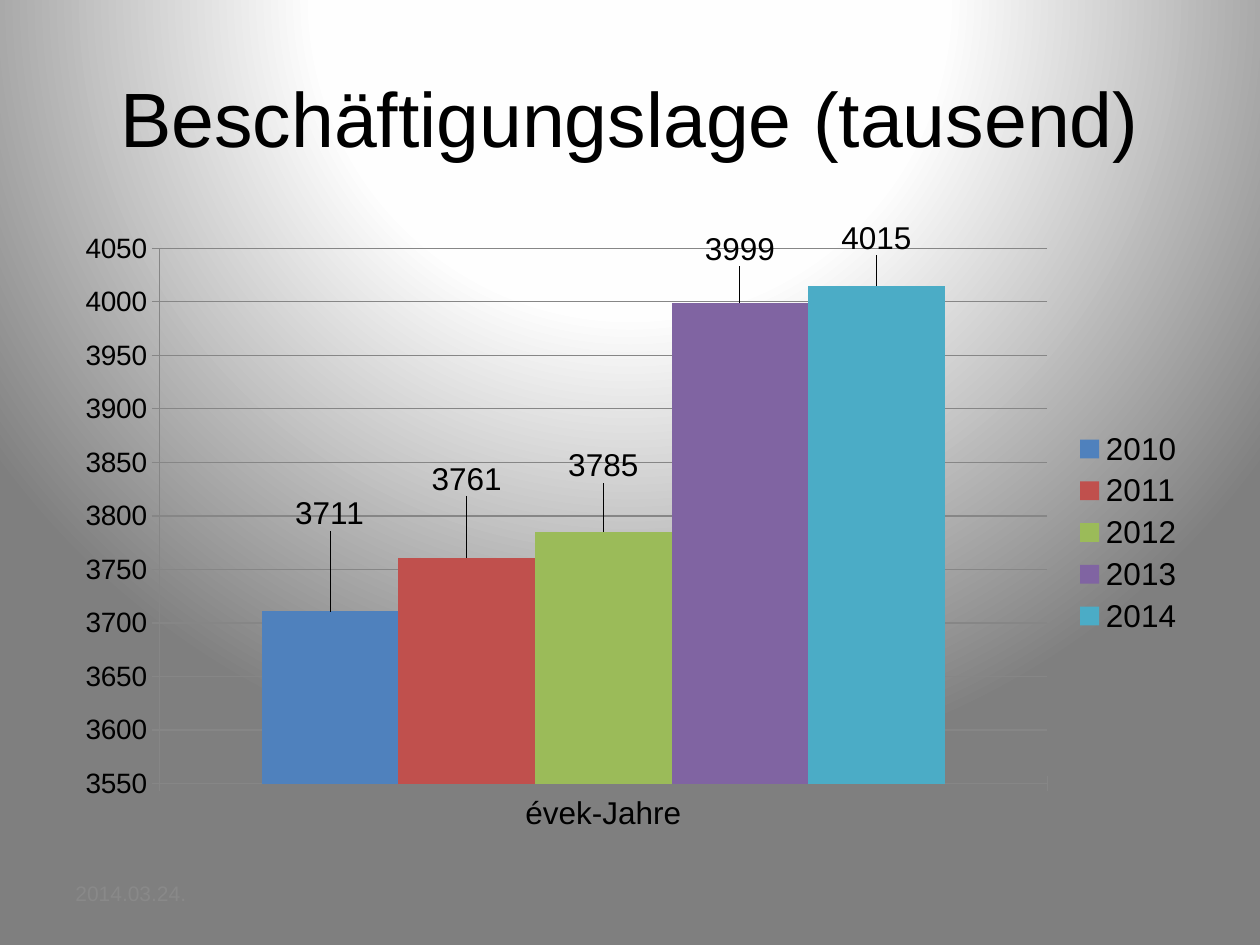
from dataclasses import dataclass
from lxml import etree
from pptx import Presentation
from pptx.chart.data import CategoryChartData
from pptx.dml.color import RGBColor
from pptx.enum.chart import XL_CHART_TYPE, XL_LABEL_POSITION, XL_LEGEND_POSITION, XL_TICK_MARK
from pptx.enum.text import MSO_ANCHOR, PP_ALIGN
from pptx.oxml import parse_xml
from pptx.oxml.ns import nsdecls, qn
from pptx.util import Pt

COLUMN = XL_CHART_TYPE.COLUMN_CLUSTERED
OUTER = XL_LABEL_POSITION.OUTSIDE_END
RIGHT = XL_LEGEND_POSITION.RIGHT
CROSS = XL_TICK_MARK.CROSS
MIDDLE = MSO_ANCHOR.MIDDLE
CENTER, LEFT = PP_ALIGN.CENTER, PP_ALIGN.LEFT

BLACK = RGBColor(0, 0, 0)
GRAY = RGBColor(0x89, 0x89, 0x89)
RULE = RGBColor(0x86, 0x86, 0x86)
BLUE = RGBColor(0x4F, 0x81, 0xBD)
RED = RGBColor(0xC0, 0x50, 0x4D)
GREEN = RGBColor(0x9B, 0xBB, 0x59)
PURPLE = RGBColor(0x80, 0x64, 0xA2)
AQUA = RGBColor(0x4B, 0xAC, 0xC6)
FACE = "Arial"
STOPS = ((0, "FFFFFF"), (40, "FEFEFE"), (100, "7F7F7F"))


@dataclass
class Bar:
    year: str
    jobs: int
    color: RGBColor
    lift: float


BARS = [
    Bar("2010", 3711, BLUE, -0.12),
    Bar("2011", 3761, RED, -0.09),
    Bar("2012", 3785, GREEN, -0.07),
    Bar("2013", 3999, PURPLE, -0.05),
    Bar("2014", 4015, AQUA, -0.04),
]


def assign(item, values: dict) -> None:
    for name, value in values.items():
        setattr(item, name, value)


def style(font, size: int, color: RGBColor = BLACK) -> None:
    assign(font, {"name": FACE, "size": Pt(size)})
    font.color.rgb = color


def write(shape, text: str, size: int, color: RGBColor, align) -> None:
    frame = shape.text_frame
    frame.text = text
    assign(frame, {"word_wrap": True, "vertical_anchor": MIDDLE})
    line = frame.paragraphs[0]
    line.alignment = align
    style(line.runs[0].font, size, color)


def shade(slide) -> None:
    fill = slide.background.fill
    fill.solid()
    stops = "".join(
        f'<a:gs pos="{pos * 1000}"><a:srgbClr val="{color}"/></a:gs>'
        for pos, color in STOPS
    )
    grad = parse_xml(
        f'<a:gradFill {nsdecls("a")} rotWithShape="1"><a:gsLst>{stops}</a:gsLst>'
        '<a:path path="circle"><a:fillToRect l="50000" t="-80000" r="50000" '
        'b="180000"/></a:path></a:gradFill>'
    )
    solid = slide.element.find(".//" + qn("a:solidFill"))
    solid.getparent().replace(solid, grad)


def layout(values: dict):
    root = etree.Element(qn("c:layout"))
    manual = etree.SubElement(root, qn("c:manualLayout"))
    for name, value in values.items():
        etree.SubElement(manual, qn("c:" + name)).set("val", str(value))
    return root


def mark(series, bar: Bar) -> None:
    series.smooth = False if hasattr(series, "smooth") else None
    series.format.fill.solid()
    series.format.fill.fore_color.rgb = bar.color
    label = series.points[0].data_label
    style(label.font, 18)
    label.position = OUTER
    index = series._element.find(".//" + qn("c:dLbl")).find(qn("c:idx"))
    index.addnext(layout({"x": 0, "y": bar.lift}))


def rule(line) -> None:
    line.width = Pt(0.75)
    line.color.rgb = RULE


def plot(slide) -> None:
    data = CategoryChartData()
    data.categories = ["évek-Jahre"]
    for bar in BARS:
        data.add_series(bar.year, [bar.jobs])
    box = (Pt(36), Pt(126), Pt(648), Pt(356.4))
    chart = slide.shapes.add_chart(COLUMN, *box, data).chart
    style(chart.font, 10)
    assign(chart, {"has_title": False, "has_legend": True})
    assign(chart.legend, {"position": RIGHT, "include_in_layout": False})
    style(chart.legend.font, 18)
    group = chart.plots[0]
    assign(group, {"gap_width": 150, "overlap": 0, "vary_by_categories": False})
    for series, bar in zip(group.series, BARS):
        mark(series, bar)
    for axis, size in ((chart.category_axis, 18), (chart.value_axis, 16)):
        axis.major_tick_mark = CROSS
        style(axis.tick_labels.font, size)
        rule(axis.format.line)
    scale = chart.value_axis
    assign(scale, {"minimum_scale": 3550, "maximum_scale": 4050,
                   "major_unit": 50, "has_major_gridlines": True})
    rule(scale.major_gridlines.format.line)
    area = chart._chartSpace.find(".//" + qn("c:plotArea"))
    for old in area.findall(qn("c:layout")):
        area.remove(old)
    area.insert(0, layout({
        "layoutTarget": "inner", "xMode": "edge", "yMode": "edge",
        "x": 0.085, "y": 0.044, "w": 0.783, "h": 0.859,
    }))


def main() -> None:
    deck = Presentation()
    assign(deck, {"slide_width": Pt(720), "slide_height": Pt(540)})
    slide = deck.slides.add_slide(deck.slide_layouts[5])
    shade(slide)
    title = slide.shapes.title
    assign(title, {"left": Pt(36), "top": Pt(21.6), "width": Pt(648), "height": Pt(90)})
    write(title, "Beschäftigungslage (tausend)", 44, BLACK, CENTER)
    plot(slide)
    date = slide.shapes.add_textbox(Pt(36), Pt(496), Pt(168), Pt(29))
    write(date, "2014.03.24.", 12, GRAY, LEFT)
    deck.save("out.pptx")


if __name__ == "__main__":
    main()
